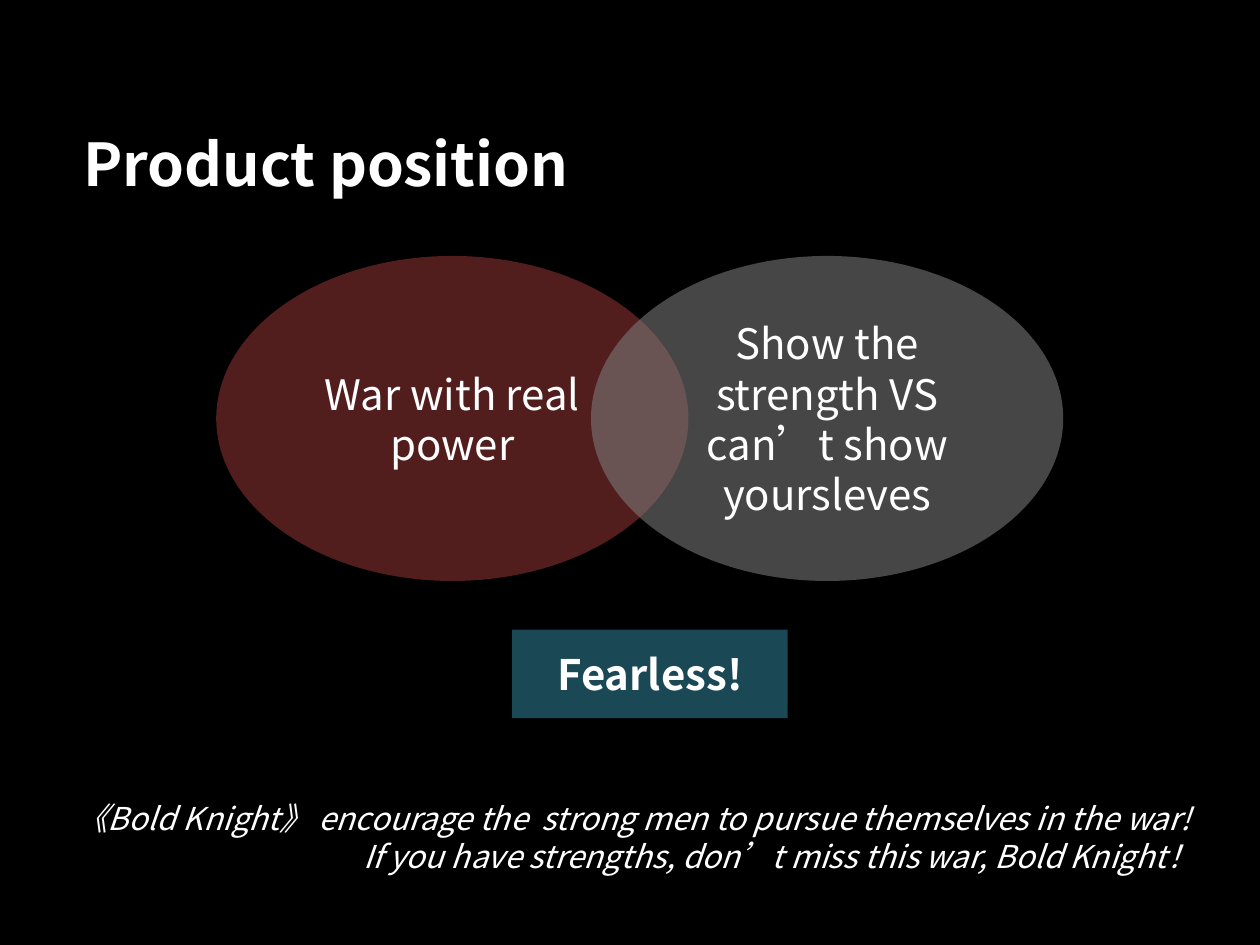
from pptx import Presentation
from pptx.dml.color import RGBColor
from pptx.enum.shapes import MSO_SHAPE
from pptx.enum.text import MSO_ANCHOR, MSO_AUTO_SIZE, PP_ALIGN
from pptx.oxml.ns import qn
from pptx.util import Inches, Pt
from lxml import etree

OVAL, RECT = MSO_SHAPE.OVAL, MSO_SHAPE.RECTANGLE
LEFT, MID, RIGHT = PP_ALIGN.LEFT, PP_ALIGN.CENTER, PP_ALIGN.RIGHT
FONT = "Noto Sans CJK SC"
COLORS = {"back": "000000", "text": "FFFFFF", "war": "953735",
          "show": "808080", "brave": "31859C"}


def write(shape, text, size=34.1, bold=False, italic=False, align=MID, inset=None):
    frame = shape.text_frame
    frame.word_wrap = True
    frame.auto_size = MSO_AUTO_SIZE.NONE
    frame.vertical_anchor = MSO_ANCHOR.MIDDLE
    if inset is not None:
        frame.margin_left = frame.margin_right = Inches(inset)
        frame.margin_top = frame.margin_bottom = Inches(inset)
    para = frame.paragraphs[0]
    para.alignment = align
    run = para.add_run()
    run.text = text
    font = run.font
    font.name, font.size = FONT, Pt(size)
    font.bold, font.italic = bold, italic
    font.color.rgb = RGBColor.from_string(COLORS["text"])
    etree.SubElement(font._element, qn("a:ea")).set("typeface", FONT)
    return para


prs = Presentation()
prs.slide_width, prs.slide_height = Inches(14.22), Inches(10.67)
slide = prs.slides.add_slide(prs.slide_layouts[5])
slide.background.fill.solid()
slide.background.fill.fore_color.rgb = RGBColor.from_string(COLORS["back"])

title = slide.shapes.title
title.left, title.top = Inches(0.88), Inches(0.77)
title.width, title.height = Inches(12.5), Inches(2.13)
write(title, "Product position", size=48, bold=True, align=LEFT, inset=0.06)

pitch = slide.shapes.add_textbox(Inches(0.78), Inches(8.67), Inches(12.8), Inches(1.56))
para = write(pitch, "《Bold Knight》 encourage the  strong men to pursue themselves in the war!  "
             "If you have strengths, don’t miss this war, Bold Knight！",
             size=25.6, italic=True, align=RIGHT, inset=0.06)
props = para._p.get_or_add_pPr()
props.set("marL", str(Inches(0.44)))
props.set("indent", str(-Inches(0.44)))

for kind, left, top, width, height, color, text, bold in (
    (OVAL, 2.44, 2.89, 5.33, 3.67, "war", "War with real power", False),
    (OVAL, 6.67, 2.89, 5.33, 3.67, "show", "Show the strength VS can’t show yoursleves", False),
    (RECT, 5.78, 7.11, 3.11, 1, "brave", "Fearless!", True),
):
    shape = slide.shapes.add_shape(kind, Inches(left), Inches(top), Inches(width), Inches(height))
    shape.shadow.inherit = False
    shape.line.fill.background()
    shape.fill.solid()
    shape.fill.fore_color.rgb = RGBColor.from_string(COLORS[color])
    tint = shape._element.spPr.find(qn("a:solidFill"))[0]
    etree.SubElement(tint, qn("a:alpha")).set("val", "55000")
    write(shape, text, bold=bold)

prs.save("out.pptx")
